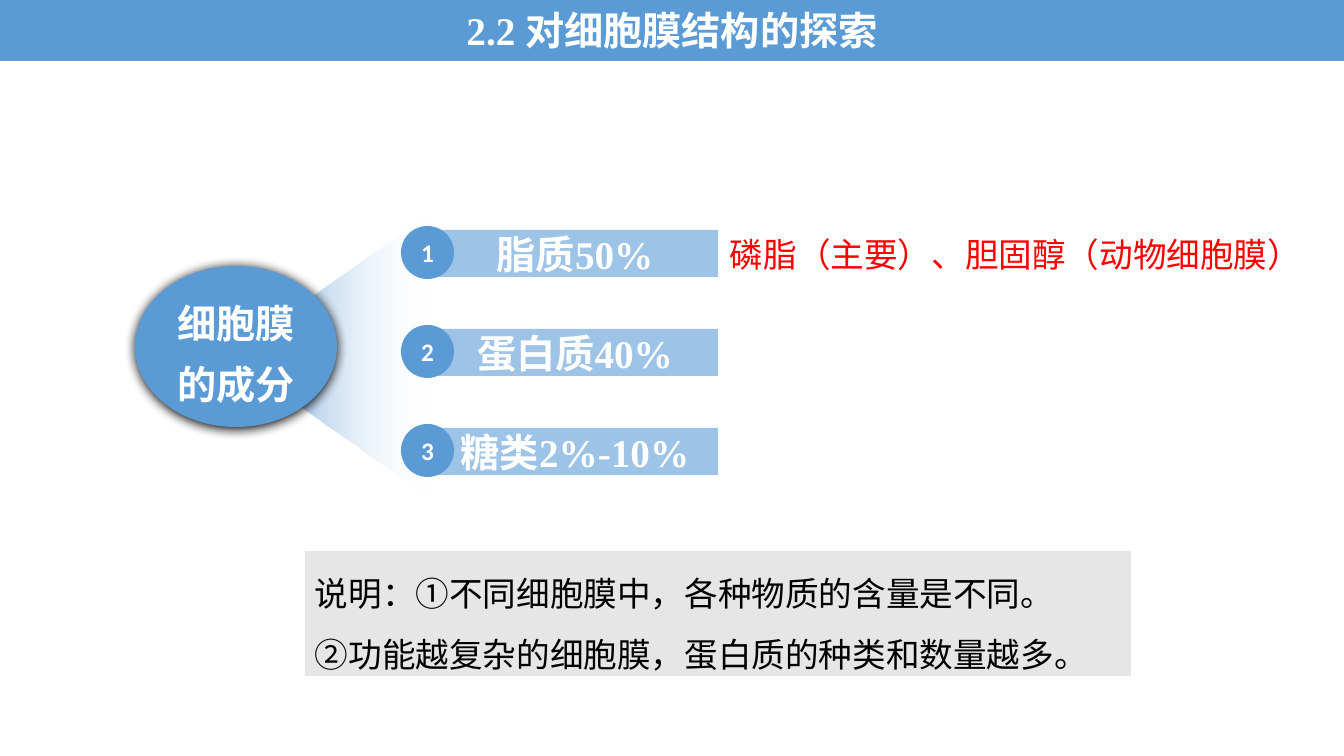
from lxml import etree
from pptx import Presentation
from pptx.dml.color import RGBColor
from pptx.enum.shapes import MSO_SHAPE
from pptx.enum.text import MSO_ANCHOR, MSO_AUTO_SIZE, PP_ALIGN
from pptx.oxml.ns import qn
from pptx.util import Pt

RECT, OVAL = MSO_SHAPE.RECTANGLE, MSO_SHAPE.OVAL
MIDDLE, TOP = MSO_ANCHOR.MIDDLE, MSO_ANCHOR.TOP
CENTER, LEFT = PP_ALIGN.CENTER, PP_ALIGN.LEFT
GROW = MSO_AUTO_SIZE.SHAPE_TO_FIT_TEXT

BLUE = RGBColor(0x5B, 0x9B, 0xD5)
LIGHT_BLUE = RGBColor(0x9D, 0xC3, 0xE6)
GRAY = RGBColor(0xE7, 0xE6, 0xE6)
WHITE = RGBColor(0xFF, 0xFF, 0xFF)
BLACK = RGBColor(0, 0, 0)
RED = RGBColor(0xFF, 0, 0)

SERIF, SANS, CJK = "Times New Roman", "Calibri", "Noto Sans CJK SC"
SCALE = 914400 / 100.8

HEADING = {"size": Pt(28), "bold": True, "name": SERIF}
HUB = {"size": Pt(28), "bold": True, "name": CJK}
NUMBER = {"size": Pt(18), "bold": True, "name": SANS}
NOTE = {"size": Pt(24), "bold": False, "name": SERIF}
DETAIL = {"size": Pt(24), "bold": False, "name": CJK}


def px(*values):
    return [round(v * SCALE) for v in values]


def write(sp, lines, font, color, align=CENTER, anchor=MIDDLE, spacing=None, inset=True, wrap=True):
    tf = sp.text_frame
    tf.word_wrap = wrap
    tf.vertical_anchor = anchor
    if not inset:
        for side in ("left", "top", "right", "bottom"):
            setattr(tf, f"margin_{side}", 0)
    for i, line in enumerate(lines):
        p = tf.add_paragraph() if i else tf.paragraphs[0]
        p.alignment = align
        p.line_spacing = spacing
        r = p.add_run()
        r.text = line
        for key, value in font.items():
            setattr(r.font, key, value)
        r.font.color.rgb = color
        etree.SubElement(r.font._element, qn("a:ea"), typeface=CJK)


def add_block(slide, kind, box, color):
    sp = slide.shapes.add_shape(kind, *px(*box))
    sp.shadow.inherit = False
    sp.fill.solid()
    sp.fill.fore_color.rgb = color
    sp.line.fill.background()
    return sp


def add_title(slide, box, text):
    write(add_block(slide, RECT, box, BLUE), [text], HEADING, WHITE)


def add_beam(slide, x, y, w, h):
    notch = y + h // 2
    builder = slide.shapes.build_freeform(x, notch - 41, scale=SCALE)
    builder.add_line_segments([(x + w, y), (x + w, y + h), (x, notch + 41), (x + 15, notch)])
    sp = builder.convert_to_shape()
    sp.shadow.inherit = False
    sp.line.fill.background()
    sp.fill.gradient()
    sp.fill.gradient_angle = 0
    for stop, color, position in zip(sp.fill.gradient_stops, (LIGHT_BLUE, WHITE), (0, 1)):
        stop.color.rgb = color
        stop.position = position
    clear = sp._element.spPr.findall(".//" + qn("a:srgbClr"))[1]
    etree.SubElement(clear, qn("a:alpha"), val="0")


def add_hub(slide, box, text):
    sp = add_block(slide, OVAL, box, BLUE)
    effects = sp._element.spPr.find(qn("a:effectLst"))
    shadow = etree.SubElement(effects, qn("a:outerShdw"), blurRad=str(Pt(8.5)), dist=str(Pt(1)),
                              dir="5400000", algn="ctr", rotWithShape="0")
    etree.SubElement(shadow, qn("a:srgbClr"), val="000000")
    write(sp, [text], HUB, WHITE, spacing=1.3, inset=False)


def add_component(slide, x, y, number, text):
    bar = add_block(slide, RECT, (x + 31, y + 4, 286, 47), LIGHT_BLUE)
    write(bar, [text], HEADING, WHITE, inset=False)
    badge = add_block(slide, OVAL, (x, y, 53, 53), BLUE)
    write(badge, [str(number)], NUMBER, WHITE)


def add_note(slide, box, lines):
    sp = add_block(slide, RECT, box, GRAY)
    write(sp, lines, NOTE, BLACK, align=LEFT, spacing=1.5)
    sp.text_frame.auto_size = GROW


def add_detail(slide, box, text):
    sp = slide.shapes.add_textbox(*px(*box))
    write(sp, [text], DETAIL, RED, align=LEFT, anchor=TOP, wrap=False)
    sp.text_frame.auto_size = GROW


def main():
    prs = Presentation()
    prs.slide_width, prs.slide_height = px(1344, 756)
    slide = prs.slides.add_slide(prs.slide_layouts[6])
    add_title(slide, (-3, -2, 1350, 63), "2.2 对细胞膜结构的探索")
    add_beam(slide, 287, 211, 147, 290)
    add_hub(slide, (135, 266, 202, 161), "细胞膜的成分")
    for i, text in enumerate(("脂质50%", "蛋白质40%", "糖类2%-10%")):
        add_component(slide, 401, 226 + 99 * i, i + 1, text)
    add_note(slide, (305, 551, 826, 125), [
        "说明：①不同细胞膜中，各种物质的含量是不同。",
        "②功能越复杂的细胞膜，蛋白质的种类和数量越多。",
    ])
    add_detail(slide, (720, 229, 597, 50), "磷脂（主要）、胆固醇（动物细胞膜）")
    prs.save("out.pptx")


if __name__ == "__main__":
    main()
